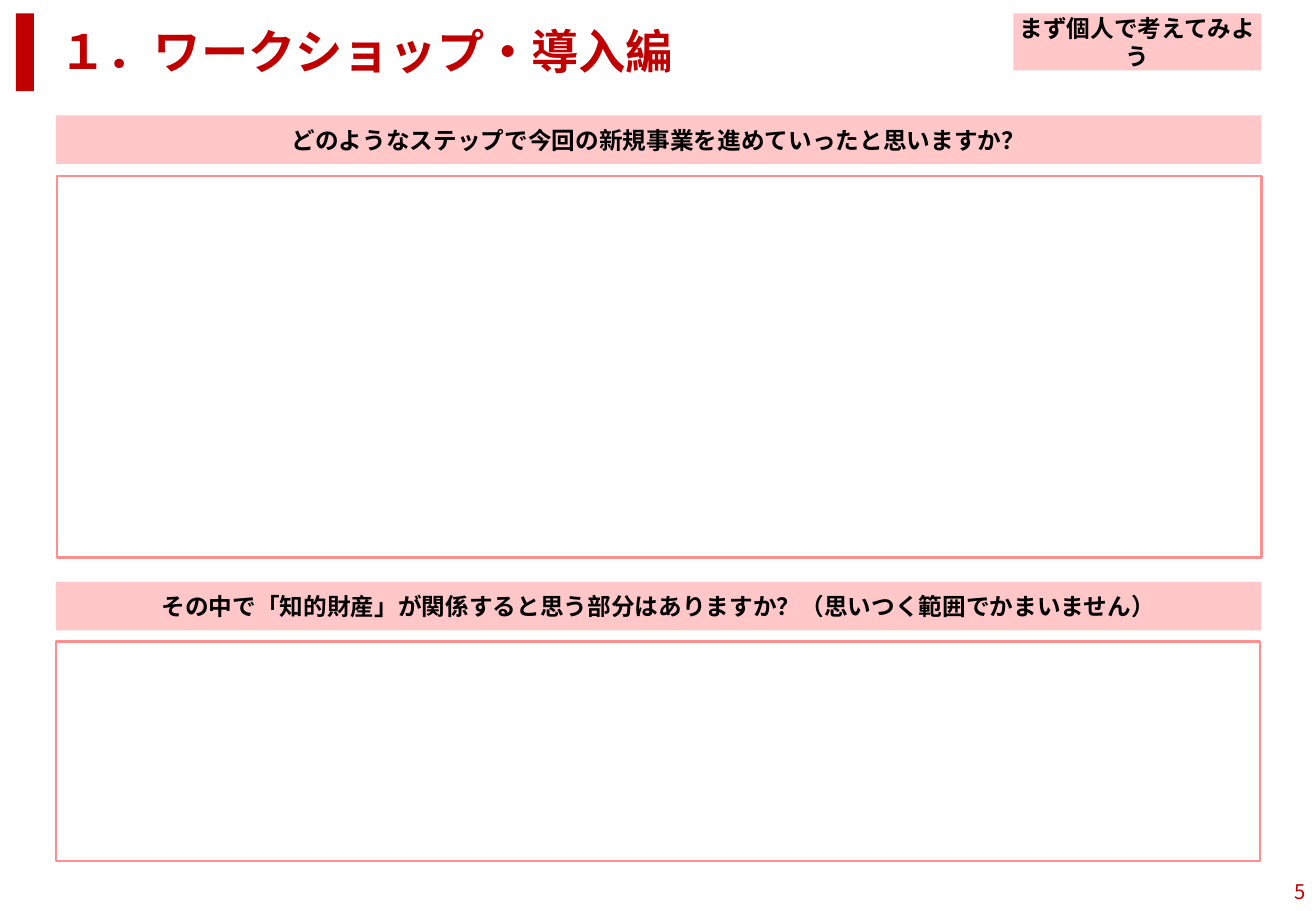
from lxml import etree
from pptx import Presentation
from pptx.dml.color import RGBColor
from pptx.enum.shapes import MSO_SHAPE
from pptx.enum.text import MSO_ANCHOR, MSO_AUTO_SIZE, PP_ALIGN
from pptx.oxml.ns import qn
from pptx.util import Inches, Pt

RECTANGLE = MSO_SHAPE.RECTANGLE
TOP, MIDDLE = MSO_ANCHOR.TOP, MSO_ANCHOR.MIDDLE
LEFT, CENTER, RIGHT = PP_ALIGN.LEFT, PP_ALIGN.CENTER, PP_ALIGN.RIGHT
NO_AUTOFIT = MSO_AUTO_SIZE.NONE

FONT = "Noto Sans CJK JP"
COLORS = {"accent": "C00000", "band": "FFC7C7", "frame": "FF8F8F", "text": "000000"}
BAND_HEIGHT = 0.4

# Question, band box (left, top, width), answer box (left, top, width, height)
QUESTIONS = [
    ("どのようなステップで今回の新規事業を進めていったと思いますか？",
     (0.46, 0.95, 9.92), (0.47, 1.45, 9.91, 3.14)),
    ("その中で「知的財産」が関係すると思う部分はありますか？（思いつく範囲でかまいません）",
     (0.46, 4.79, 9.92), (0.46, 5.28, 9.91, 1.81)),
]


def color(name):
    return RGBColor.from_string(COLORS[name])


def write(shape, text, size, color_name, bold, align, anchor, inset=None):
    frame = shape.text_frame
    frame.word_wrap = True
    frame.auto_size = NO_AUTOFIT
    frame.vertical_anchor = anchor
    if inset is not None:
        frame.margin_left = frame.margin_right = Inches(inset)
        frame.margin_top = frame.margin_bottom = Inches(inset)
    paragraph = frame.paragraphs[0]
    paragraph.alignment = align
    run = paragraph.add_run()
    run.text = text
    font = run.font
    font.name, font.size, font.bold = FONT, Pt(size), bold
    font.color.rgb = color(color_name)
    east_asian = etree.SubElement(font._element, qn("a:ea"))
    east_asian.set("typeface", FONT)


def add_rectangle(slide, box, fill=None, line=None):
    shape = slide.shapes.add_shape(RECTANGLE, *map(Inches, box))
    shape.shadow.inherit = False
    if fill:
        shape.fill.solid()
        shape.fill.fore_color.rgb = color(fill)
    else:
        shape.fill.background()
    if line:
        shape.line.color.rgb = color(line)
        shape.line.width = Pt(1.5)
    else:
        shape.line.fill.background()
    return shape


def add_band(slide, box, text):
    band = add_rectangle(slide, box, fill="band")
    write(band, text, 14, "text", True, CENTER, MIDDLE, inset=0)


def add_header(slide, box):
    left, top, width, height = box
    add_rectangle(slide, (left, top, 0.15, height), fill="accent")
    title = slide.shapes.title
    title.left, title.top = Inches(left + 0.26), Inches(top + 0.02)
    title.width, title.height = Inches(10.08), Inches(0.57)
    write(title, "１．ワークショップ・導入編", 28, "accent", True, LEFT, TOP)
    badge_width = 2.04
    add_band(slide, (left + width - badge_width, top, badge_width, 0.47),
             "まず個人で考えてみよう")


def add_question(slide, question, band_box, answer_box):
    add_band(slide, (*band_box, BAND_HEIGHT), question)
    add_rectangle(slide, answer_box, line="frame")


def add_page_number(slide, box, number):
    text_box = slide.shapes.add_textbox(*map(Inches, box))
    write(text_box, number, 12, "accent", False, RIGHT, TOP)


def main():
    presentation = Presentation()
    presentation.slide_width = Inches(10.83)
    presentation.slide_height = Inches(7.5)
    slide = presentation.slides.add_slide(presentation.slide_layouts[5])
    add_header(slide, (0.13, 0.11, 10.25, 0.64))
    for question, band_box, answer_box in QUESTIONS:
        add_question(slide, question, band_box, answer_box)
    add_page_number(slide, (10.35, 7.19, 0.49, 0.3), "5")
    presentation.save("out.pptx")


if __name__ == "__main__":
    main()
